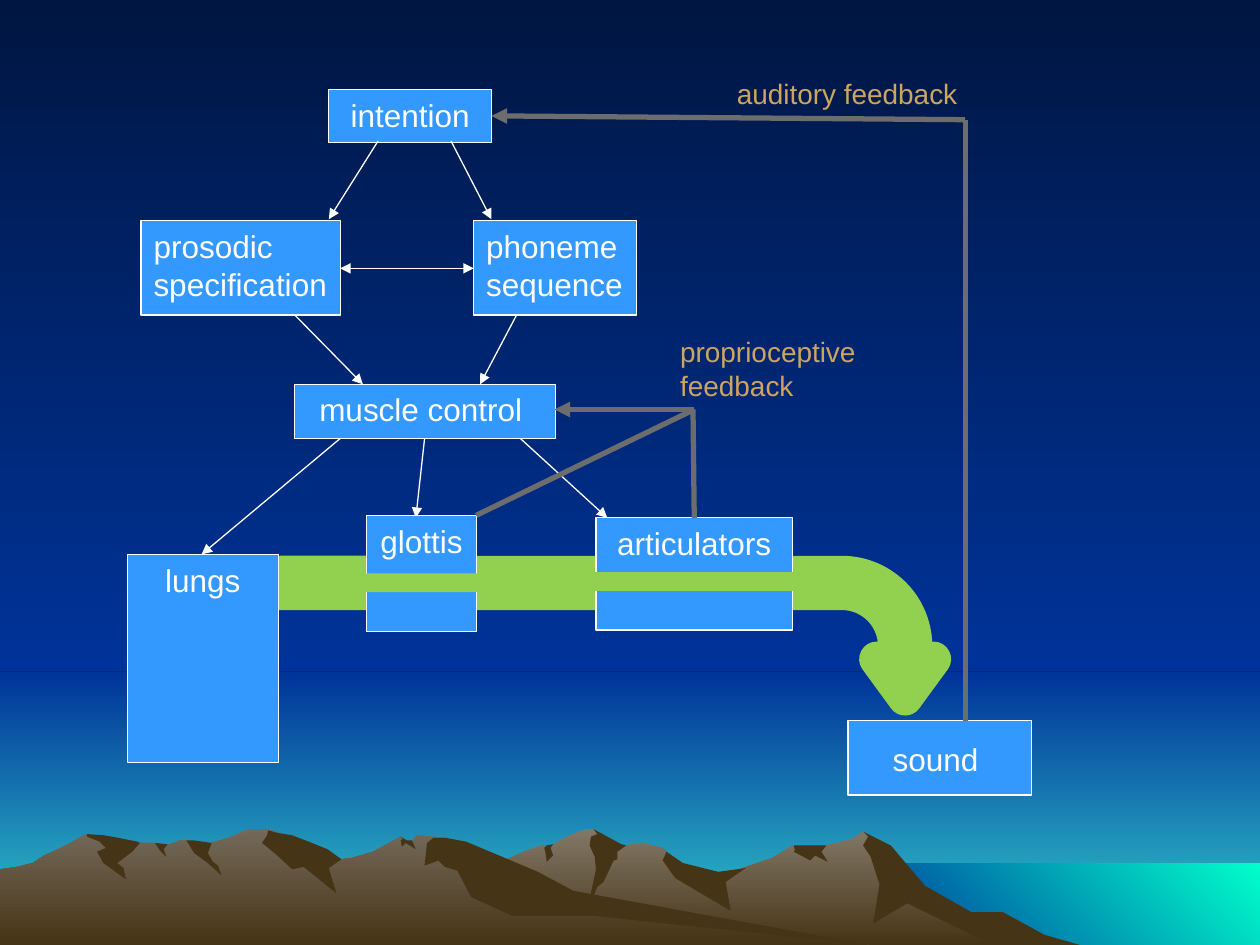
from pptx import Presentation
from pptx.dml.color import RGBColor
from pptx.enum.shapes import MSO_CONNECTOR, MSO_SHAPE
from pptx.enum.text import MSO_ANCHOR, PP_ALIGN
from pptx.oxml.ns import qn
from pptx.util import Pt
from lxml import etree

PX = 9144  # 100 px to the inch
WIDTH, HEIGHT = 1000, 750
FONT = "Arial"
RECT, UTURN = MSO_SHAPE.RECTANGLE, MSO_SHAPE.U_TURN_ARROW
STRAIGHT = MSO_CONNECTOR.STRAIGHT
LEFT, CENTER = PP_ALIGN.LEFT, PP_ALIGN.CENTER

WHITE = RGBColor(0xFF, 0xFF, 0xFF)
BOX_BLUE = RGBColor(0x33, 0x99, 0xFF)
GREEN = RGBColor(0x92, 0xD0, 0x50)
GRAY = RGBColor(0x6D, 0x6D, 0x6D)
GOLD = RGBColor(0xCD, 0xA4, 0x60)
NAVY = RGBColor(0x00, 0x16, 0x42)
BLUE = RGBColor(0x00, 0x33, 0x99)
TEAL = RGBColor(0x33, 0xCC, 0xCC)
AQUA = RGBColor(0x00, 0xFF, 0xCC)
BROWN = RGBColor(0x46, 0x34, 0x16)
RIGHT_ROCK = RGBColor(0x82, 0x78, 0x68)
LEFT_ROCK = RGBColor(0x74, 0x69, 0x5A)

DOWN, UP_RIGHT = 270, 45
SCENERY = [  # left, top, width, height, first colour, last colour, angle
    (0, 533, 1000, 217, BLUE, TEAL, DOWN),
    (0, 0, 1000, 533, NAVY, BLUE, DOWN),
    (683, 685, 317, 65, BLUE, AQUA, UP_RIGHT),
]

RIGHT_RIDGE = [
    (802, 740), (778, 727), (764, 723), (723, 698), (702, 671), (685, 660), (676, 666),
    (656, 671), (629, 671), (613, 681), (566, 697), (536, 690), (529, 676), (526, 673),
    (509, 669), (497, 671), (486, 673), (474, 661), (471, 658), (465, 658), (450, 664),
    (438, 671), (430, 671), (418, 675), (405, 681), (394, 685), (355, 698), (327, 709),
    (277, 739), (258, 750), (820, 750)]
RIGHT_SHADOWS = [
    [(796, 724), (771, 724), (734, 703), (707, 671), (685, 660), (689, 664), (685, 671),
     (691, 680), (698, 702), (693, 733), (720, 717), (788, 750), (857, 750), (829, 742)],
    [(471, 658), (474, 662), (469, 664), (468, 671), (472, 680), (473, 690), (465, 727),
     (474, 704), (479, 700), (487, 683), (490, 682), (490, 676), (497, 671), (493, 670)],
    [(529, 676), (526, 683), (536, 697), (580, 723), (576, 700), (592, 689), (570, 692),
     (542, 685)],
    [(650, 671), (630, 671), (631, 675), (630, 676), (643, 683), (647, 679), (657, 684),
     (652, 676), (656, 671)],
    [(433, 677), (432, 673), (434, 671), (439, 670), (437, 673), (439, 679), (434, 684)],
]
LEFT_RIDGE = [
    (690, 750), (667, 748), (432, 712), (354, 665), (331, 663), (327, 668), (323, 668),
    (318, 664), (296, 676), (279, 681), (271, 682), (260, 676), (236, 681), (223, 663),
    (219, 660), (212, 658), (196, 658), (189, 662), (178, 666), (160, 671), (148, 667),
    (143, 667), (132, 671), (123, 669), (111, 669), (94, 671), (68, 662), (56, 669),
    (46, 674), (35, 679), (26, 685), (14, 688), (0, 690), (0, 750)]
LEFT_SHADOWS = [
    [(212, 663), (208, 669), (219, 678), (232, 690), (241, 688), (267, 709), (261, 689),
     (271, 682), (260, 674), (245, 668), (232, 663), (220, 661), (213, 659)],
    [(370, 668), (354, 665), (344, 665), (339, 669), (337, 687), (348, 683), (353, 688),
     (363, 691), (374, 712), (407, 727), (472, 727), (690, 750), (455, 707), (427, 692),
     (401, 681)],
    [(318, 667), (320, 666), (318, 664), (323, 667), (327, 667), (330, 674), (322, 669),
     (319, 672)],
    [(154, 667), (168, 669), (165, 677), (169, 684), (173, 687), (176, 695), (165, 685),
     (154, 677), (148, 667)],
    [(133, 670), (130, 674), (132, 680), (127, 675), (123, 669)],
    [(109, 668), (111, 669), (105, 676), (93, 685), (98, 689), (100, 698), (82, 685),
     (77, 676), (84, 673), (79, 668), (69, 664), (69, 662), (83, 663), (94, 665)],
]

# text, left, top, width, height, alignment, top margin
CONTROL_BOXES = [
    ("intention", 261, 71, 129, 42, CENTER, 5),
    ("phoneme sequence", 376, 175, 129, 75, LEFT, 5),
    ("prosodic specification", 112, 175, 158, 75, LEFT, 5),
    ("sound ", 673, 572, 146, 59, CENTER, 15),
    ("muscle control ", 234, 305, 207, 43, CENTER, 5),
]
ORGAN_BOXES = [
    ("lungs", 101, 440, 120, 165, CENTER, 5),
    ("glottis", 291, 409, 87, 92, CENTER, 5),
    ("articulators", 473, 411, 156, 89, CENTER, 5),
]
AIR_CHANNELS = [(273, 455, 120, 15), (472, 454, 178, 15)]
AIRFLOW = (165, 455, 576, 132)
AIRFLOW_ADJ = (0.116, 0.171, 0.234, 0.438, 0.75)

COMMANDS = [  # from x, y, to x, y
    (300, 112, 261, 174), (358, 112, 390, 174), (234, 250, 288, 305),
    (410, 250, 381, 305), (270, 348, 160, 440), (337, 348, 330, 411),
    (413, 348, 482, 411)]
EXCHANGE = (376, 213, 270, 213)
FEEDBACK_ARROWS = [(766, 95, 390, 92), (551, 325, 440, 325)]
FEEDBACK_LINES = [(378, 409, 551, 325), (551, 411, 550, 325), (766, 95, 766, 572)]
LABELS = [
    (["auditory feedback"], 575, 56, 290, 67),
    (["proprioceptive", "feedback"], 530, 261, 290, 64),
]


def px(*values):
    return [v * PX for v in values]


def set_gradient(fill, first, last, angle):
    fill.gradient()
    fill.gradient_angle = angle
    for stop, color, position in zip(fill.gradient_stops, (first, last), (0, 1)):
        stop.color.rgb = color
        stop.position = position


def set_solid(fill, color):
    fill.solid()
    fill.fore_color.rgb = color


def add_plain(shapes, kind, *frame):
    s = shapes.add_shape(kind, *px(*frame))
    s.shadow.inherit = False
    s.line.fill.background()
    return s


def add_outline(shapes, points):
    builder = shapes.build_freeform(*points[0], scale=PX)
    builder.add_line_segments(points[1:], close=True)
    s = builder.convert_to_shape()
    s.shadow.inherit = False
    s.line.fill.background()
    return s


def add_mountains(shapes, ridge, rock, shadows):
    set_gradient(add_outline(shapes, ridge).fill, rock, BROWN, DOWN)
    for points in shadows:
        set_solid(add_outline(shapes, points).fill, BROWN)


def write(tf, lines, size, color, align):
    tf.word_wrap = True
    tf.vertical_anchor = MSO_ANCHOR.TOP
    for i, line in enumerate(lines):
        p = tf.add_paragraph() if i else tf.paragraphs[0]
        p.text, p.alignment = line, align
        p.font.name, p.font.size, p.font.color.rgb = FONT, Pt(size), color


def add_box(shapes, text, left, top, width, height, align, margin):
    s = add_plain(shapes, RECT, left, top, width, height)
    set_solid(s.fill, BOX_BLUE)
    s.line.color.rgb, s.line.width = WHITE, Pt(0.75)
    s.text_frame.margin_top = margin * PX
    write(s.text_frame, [text], 18, WHITE, align)


def add_link(shapes, ends, color, width, *arrowheads):
    """Draw a line; arrowheads name its ends, headEnd (from) and tailEnd (to)."""
    s = shapes.add_connector(STRAIGHT, *px(*ends))
    s.line.color.rgb, s.line.width = color, Pt(width)
    for end in arrowheads:
        etree.SubElement(s.line._get_or_add_ln(), qn("a:" + end), type="triangle")
    etree.SubElement(s._element.spPr, qn("a:effectLst"))


def main():
    prs = Presentation()
    prs.slide_width, prs.slide_height = px(WIDTH, HEIGHT)
    slide = prs.slides.add_slide(prs.slide_layouts[6])
    shapes = slide.shapes

    set_gradient(slide.background.fill, NAVY, BLUE, DOWN)
    for *frame, first, last, angle in SCENERY:
        set_gradient(add_plain(shapes, RECT, *frame).fill, first, last, angle)
    add_mountains(shapes, RIGHT_RIDGE, RIGHT_ROCK, RIGHT_SHADOWS)
    add_mountains(shapes, LEFT_RIDGE, LEFT_ROCK, LEFT_SHADOWS)

    for box in CONTROL_BOXES:
        add_box(shapes, *box)
    for ends in COMMANDS:
        add_link(shapes, ends, WHITE, 0.75, "tailEnd")
    add_link(shapes, EXCHANGE, WHITE, 0.75, "headEnd", "tailEnd")

    airflow = add_plain(shapes, UTURN, *AIRFLOW)
    for i, value in enumerate(AIRFLOW_ADJ):
        airflow.adjustments[i] = value
    set_solid(airflow.fill, GREEN)
    airflow.line.color.rgb, airflow.line.width = GREEN, Pt(20)
    for box in ORGAN_BOXES:
        add_box(shapes, *box)
    for frame in AIR_CHANNELS:
        set_solid(add_plain(shapes, RECT, *frame).fill, GREEN)

    for ends in FEEDBACK_ARROWS:
        add_link(shapes, ends, GRAY, 3, "tailEnd")
    for ends in FEEDBACK_LINES:
        add_link(shapes, ends, GRAY, 3)
    for lines, *frame in LABELS:
        write(shapes.add_textbox(*px(*frame)).text_frame, lines, 16, GOLD, LEFT)

    prs.save("out.pptx")


if __name__ == "__main__":
    main()
